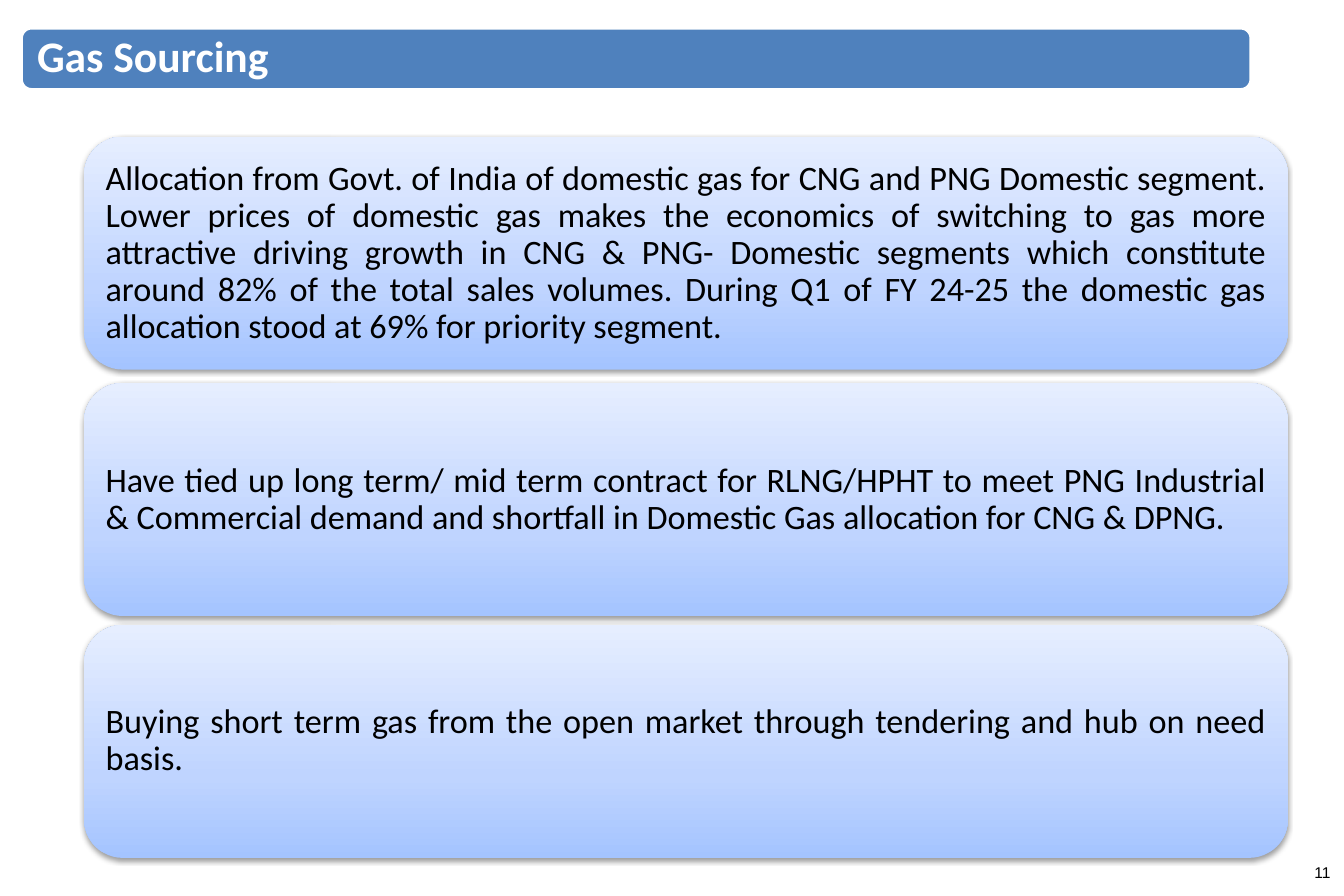
from dataclasses import dataclass

from pptx import Presentation
from pptx.dml.color import RGBColor
from pptx.enum import shapes, text
from pptx.oxml import ns, parse_xml
from pptx.util import Pt


@dataclass(frozen=True)
class Theme:
    font: str = "Calibri"
    number_font: str = "Arial"
    heading_size: float = 28
    body_size: float = 22
    number_size: float = 10
    banner: str = "4F81BD"
    light: str = "FFFFFF"
    ink: str = "000000"
    card_stops: tuple = ((0, "A4C4FF"), (35, "BFD4FF"), (100, "E6EEFF"))


@dataclass(frozen=True)
class Panel:
    left: float
    top: float
    width: float
    height: float
    inset: float
    words: str


THEME = Theme()
HEADING = Panel(13.68, 18, 790.56, 39.6, 8.2, "Gas Sourcing")
PAGE_NUMBER = Panel(662.4, 545, 201.6, 31, 8.64, "11")
SOURCES = (
    (87.84, "Allocation from Govt. of India of domestic gas for CNG and PNG Domestic segment. "
            "Lower prices of domestic gas makes the economics of switching to gas more attractive "
            "driving growth in CNG & PNG- Domestic segments which constitute around 82% of the "
            "total sales volumes. During Q1 of FY 24-25 the domestic gas allocation stood at 69% "
            "for priority segment."),
    (246.24, "Have tied up long term/ mid term contract for RLNG/HPHT to meet PNG Industrial & "
             "Commercial demand and shortfall in Domestic Gas allocation for CNG & DPNG."),
    (401.76, "Buying short term gas from the open market through tendering and hub on need basis."),
)
CARDS = [Panel(54, top, 774, 149.76, 6.6, words) for top, words in SOURCES]


def bounds(panel: Panel) -> tuple:
    return Pt(panel.left), Pt(panel.top), Pt(panel.width), Pt(panel.height)


def write(shape, panel: Panel, font: str, size: float, color: str, align,
          bold: bool = False, spacing: float = 0.9) -> None:
    frame = shape.text_frame
    frame.word_wrap = True
    frame.vertical_anchor = text.MSO_ANCHOR.MIDDLE
    frame.margin_left = frame.margin_right = Pt(panel.inset)
    frame.margin_top = frame.margin_bottom = Pt(4)
    frame.text = panel.words
    sentence = frame.paragraphs[0]
    sentence.alignment = align
    sentence.line_spacing = spacing
    sentence.font.name = font
    sentence.font.size = Pt(size)
    sentence.font.bold = bold
    sentence.font.color.rgb = RGBColor.from_string(color)


def rounded(slide, panel: Panel):
    return slide.shapes.add_shape(shapes.MSO_SHAPE.ROUNDED_RECTANGLE, *bounds(panel))


def draw_heading(slide, panel: Panel) -> None:
    banner = rounded(slide, panel)
    banner.shadow.inherit = False
    banner.fill.solid()
    banner.fill.fore_color.rgb = RGBColor.from_string(THEME.banner)
    banner.line.color.rgb = RGBColor.from_string(THEME.light)
    banner.line.width = Pt(2)
    write(banner, panel, THEME.font, THEME.heading_size, THEME.light,
          text.PP_ALIGN.LEFT, bold=True)


def draw_card(slide, panel: Panel) -> None:
    card = rounded(slide, panel)
    properties = card._element.spPr
    stops = "".join(f'<a:gs pos="{place * 1000}"><a:srgbClr val="{color}"/></a:gs>'
                    for place, color in THEME.card_stops)
    properties.append(parse_xml(
        f'<a:gradFill {ns.nsdecls("a")} rotWithShape="1"><a:gsLst>{stops}</a:gsLst>'
        '<a:lin ang="16200000" scaled="0"/></a:gradFill>'))
    card.line.fill.background()
    properties.append(parse_xml(
        f'<a:effectLst {ns.nsdecls("a")}>'
        f'<a:outerShdw blurRad="{Pt(3.1)}" dist="{Pt(1.6)}" dir="5400000" rotWithShape="0">'
        f'<a:srgbClr val="{THEME.ink}"><a:alpha val="38000"/></a:srgbClr>'
        '</a:outerShdw></a:effectLst>'))
    write(card, panel, THEME.font, THEME.body_size, THEME.ink, text.PP_ALIGN.JUSTIFY)


def draw_page_number(slide, panel: Panel) -> None:
    write(slide.shapes.add_textbox(*bounds(panel)), panel, THEME.number_font,
          THEME.number_size, THEME.ink, text.PP_ALIGN.RIGHT, spacing=1.0)


def main() -> None:
    """Build the gas sourcing slide."""
    deck = Presentation()
    deck.slide_width, deck.slide_height = Pt(864), Pt(576)
    slide = deck.slides.add_slide(deck.slide_layouts[6])
    draw_page_number(slide, PAGE_NUMBER)
    draw_heading(slide, HEADING)
    for card in CARDS:
        draw_card(slide, card)
    deck.save("out.pptx")


if __name__ == "__main__":
    main()
